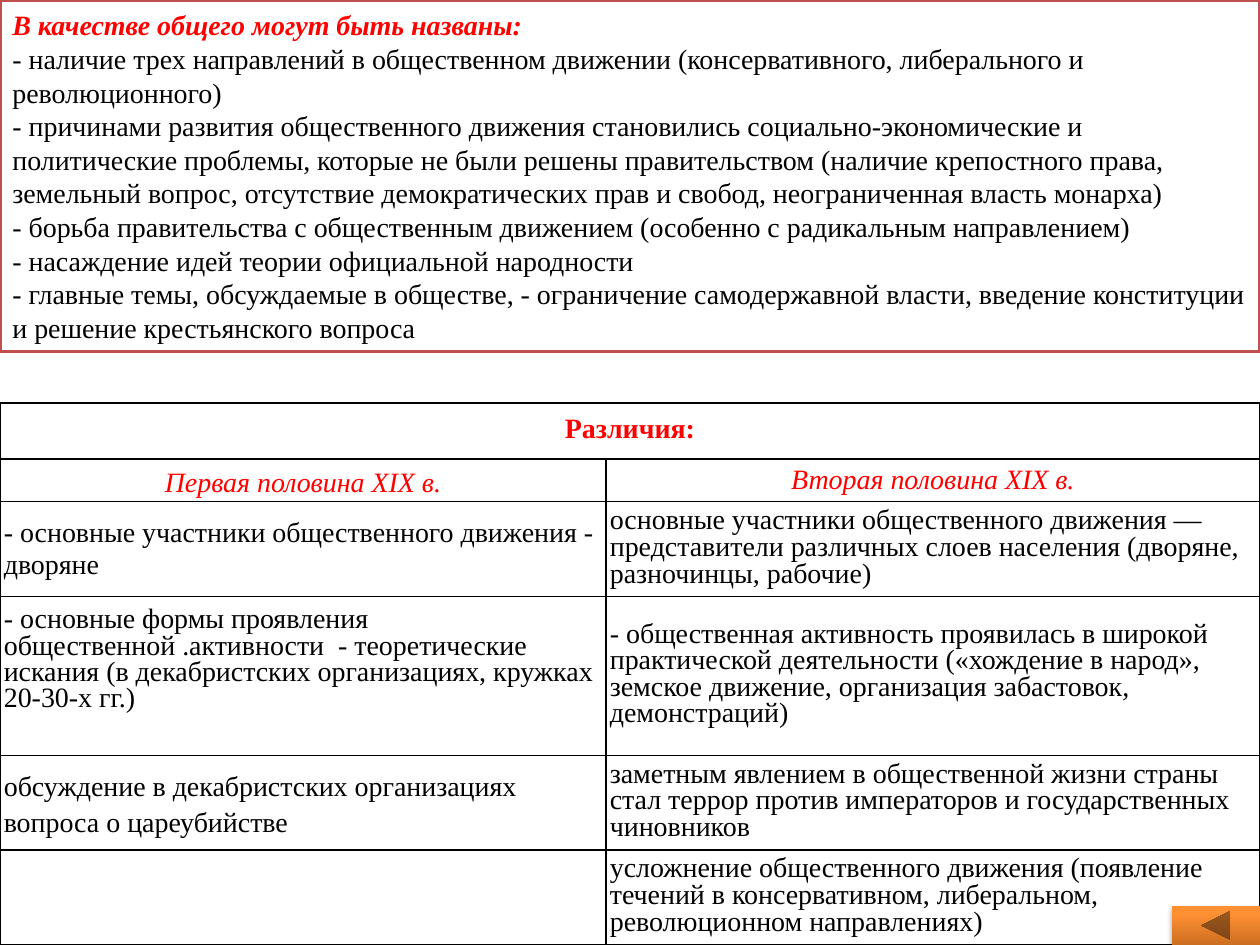
from lxml import etree
from pptx import Presentation
from pptx.dml.color import RGBColor
from pptx.enum.shapes import MSO_SHAPE as SHAPE
from pptx.enum.text import MSO_ANCHOR as ANCHOR, PP_ALIGN as ALIGN
from pptx.oxml import parse_xml
from pptx.oxml.ns import nsdecls, qn
from pptx.util import Pt

RED = RGBColor(0xFF, 0x00, 0x00)
BLACK = RGBColor(0x00, 0x00, 0x00)
WHITE = RGBColor(0xFF, 0xFF, 0xFF)
BRICK = RGBColor(0xC0, 0x50, 0x4D)
DARK_ORANGE = RGBColor(0xCC, 0x6E, 0x20)
ORANGE = RGBColor(0xFF, 0x90, 0x34)
LIGHT_ORANGE = RGBColor(0xFF, 0x91, 0x36)
FONT = "Times New Roman"

COMMON_TITLE = "В качестве общего могут быть названы:"
COMMON = [
    "- наличие трех направлений в общественном движении (консервативного, либерального и революционного)",
    "- причинами развития общественного движения становились социально-экономические и политические "
    "проблемы, которые не были решены правительством (наличие крепостного права, земельный вопрос, "
    "отсутствие демократических прав и свобод, неограниченная власть монарха)",
    "- борьба правительства с общественным движением (особенно с радикальным направлением)",
    "- насаждение идей теории официальной народности",
    "- главные темы, обсуждаемые в обществе, - ограничение самодержавной власти, введение конституции "
    "и решение крестьянского вопроса",
]
HEAD = dict(color=RED, align=ALIGN.CENTER)
TIGHT, LOOSE = Pt(15.1), Pt(15.4)
DIFFERENCES = [
    [("Различия:", dict(HEAD, bold=True, spacing=LOOSE))],
    [("Первая половина XIX в.", dict(HEAD, italic=True, spacing=1.15)),
     ("Вторая половина XIX в.", dict(HEAD, italic=True))],
    [("- основные участники общественного движения - дворяне", {}),
     ("основные участники общественного движения — представители различных слоев населения "
      "(дворяне, разночинцы, рабочие)", dict(spacing=LOOSE))],
    [("- основные формы проявления общественной .активности  - теоретические искания "
      "(в декабристских организациях, кружках 20-30-х гг.)", dict(spacing=TIGHT)),
     ("- общественная активность проявилась в широкой практической деятельности («хождение в народ», "
      "земское движение, организация забастовок, демонстраций)", dict(spacing=TIGHT))],
    [("обсуждение в декабристских организациях вопроса о цареубийстве", dict(spacing=1.15)),
     ("заметным явлением в общественной жизни страны стал террор против императоров и "
      "государственных чиновников", dict(spacing=TIGHT))],
    [("", {}),
     ("усложнение общественного движения (появление течений в консервативном, либеральном, "
      "революционном направлениях)", dict(spacing=LOOSE))],
]
COL_SHARES = [0.481, 0.519]
ROW_HEIGHTS = [31.7, 24.5, 54, 90.7, 54, 54]
RAISED_CELL, RAISED_BOTTOM = (3, 0), 17


def write(p, text, color=BLACK, bold=False, italic=False, align=ALIGN.LEFT, spacing=None):
    """Put formatted text into a paragraph."""
    p.alignment = align
    p.line_spacing = spacing
    r = p.add_run()
    r.text = text
    r.font.name, r.font.size = FONT, Pt(16)
    r.font.bold, r.font.italic = bold, italic
    r.font.color.rgb = color


def add_border(cell):
    """Draw a thin black line on the four sides of a cell."""
    props = cell._tc.get_or_add_tcPr()
    for i, side in enumerate(("lnL", "lnR", "lnT", "lnB")):
        props.insert(i, parse_xml(
            f'<a:{side} {nsdecls("a")} w="{Pt(1)}"><a:solidFill>'
            f'<a:srgbClr val="{BLACK}"/></a:solidFill></a:{side}>'))


def add_common_box(slide, x, y, w, h):
    """Add the framed list of common features."""
    s = slide.shapes.add_shape(SHAPE.RECTANGLE, Pt(x), Pt(y), Pt(w), Pt(h))
    s.shadow.inherit = False
    s.fill.solid()
    s.fill.fore_color.rgb = WHITE
    s.line.color.rgb = BRICK
    s.line.width = Pt(2)
    tf = s.text_frame
    tf.word_wrap = True
    tf.vertical_anchor = ANCHOR.MIDDLE
    write(tf.paragraphs[0], COMMON_TITLE, color=RED, bold=True, italic=True)
    for text in COMMON:
        write(tf.add_paragraph(), text)


def add_differences_table(slide, x, y, w, h):
    """Add the table that compares the two halves of the century."""
    table = slide.shapes.add_table(
        len(DIFFERENCES), len(COL_SHARES), Pt(x), Pt(y), Pt(w), Pt(h)).table
    table.first_row = table.horz_banding = False
    for col, share in zip(table.columns, COL_SHARES):
        col.width = Pt(w * share)
    for row, height in zip(table.rows, ROW_HEIGHTS):
        row.height = Pt(height * h / sum(ROW_HEIGHTS))
    for cell in table.iter_cells():
        cell.fill.solid()
        cell.fill.fore_color.rgb = WHITE
        cell.vertical_anchor = ANCHOR.MIDDLE
        cell.margin_left = cell.margin_right = Pt(2.2)
        cell.margin_top = cell.margin_bottom = 0
        add_border(cell)
    table.cell(0, 0).merge(table.cell(0, 1))
    table.cell(*RAISED_CELL).margin_bottom = Pt(RAISED_BOTTOM)
    for i, row in enumerate(DIFFERENCES):
        for j, (text, style) in enumerate(row):
            if text:
                write(table.cell(i, j).text_frame.paragraphs[0], text, **style)


def add_back_button(slide, x, y, w, h):
    """Add the orange button that points back."""
    s = slide.shapes.add_shape(SHAPE.ACTION_BUTTON_BACK_OR_PREVIOUS, Pt(x), Pt(y), Pt(w), Pt(h))
    s.line.fill.background()
    s.fill.gradient()
    grad = s.fill._xPr.find(qn("a:gradFill"))
    stops = grad.find(qn("a:gsLst"))
    for stop in list(stops):
        stops.remove(stop)
    for pos, color in ((0, DARK_ORANGE), (80, ORANGE), (100, LIGHT_ORANGE)):
        stop = etree.SubElement(stops, qn("a:gs"), pos=str(pos * 1000))
        etree.SubElement(stop, qn("a:srgbClr"), val=str(color))
    grad.find(qn("a:lin")).set("ang", str(270 * 60000))
    s.shadow.inherit = False
    effects = s._element.spPr.find(qn("a:effectLst"))
    effects.append(parse_xml(
        f'<a:outerShdw {nsdecls("a")} blurRad="{Pt(3.1)}" dist="{Pt(1.8)}" dir="{90 * 60000}" '
        f'rotWithShape="0"><a:srgbClr val="{BLACK}"><a:alpha val="35000"/></a:srgbClr></a:outerShdw>'))


def main():
    """Build the slide and save it."""
    prs = Presentation()
    prs.slide_width, prs.slide_height = Pt(720), Pt(540)
    slide = prs.slides.add_slide(prs.slide_layouts[6])
    add_common_box(slide, 0, 0, 720, 201)
    add_differences_table(slide, 0, 230.4, 720, 309.6)
    add_back_button(slide, 669.6, 517.7, 50.4, 22.3)
    prs.save("out.pptx")


if __name__ == "__main__":
    main()
